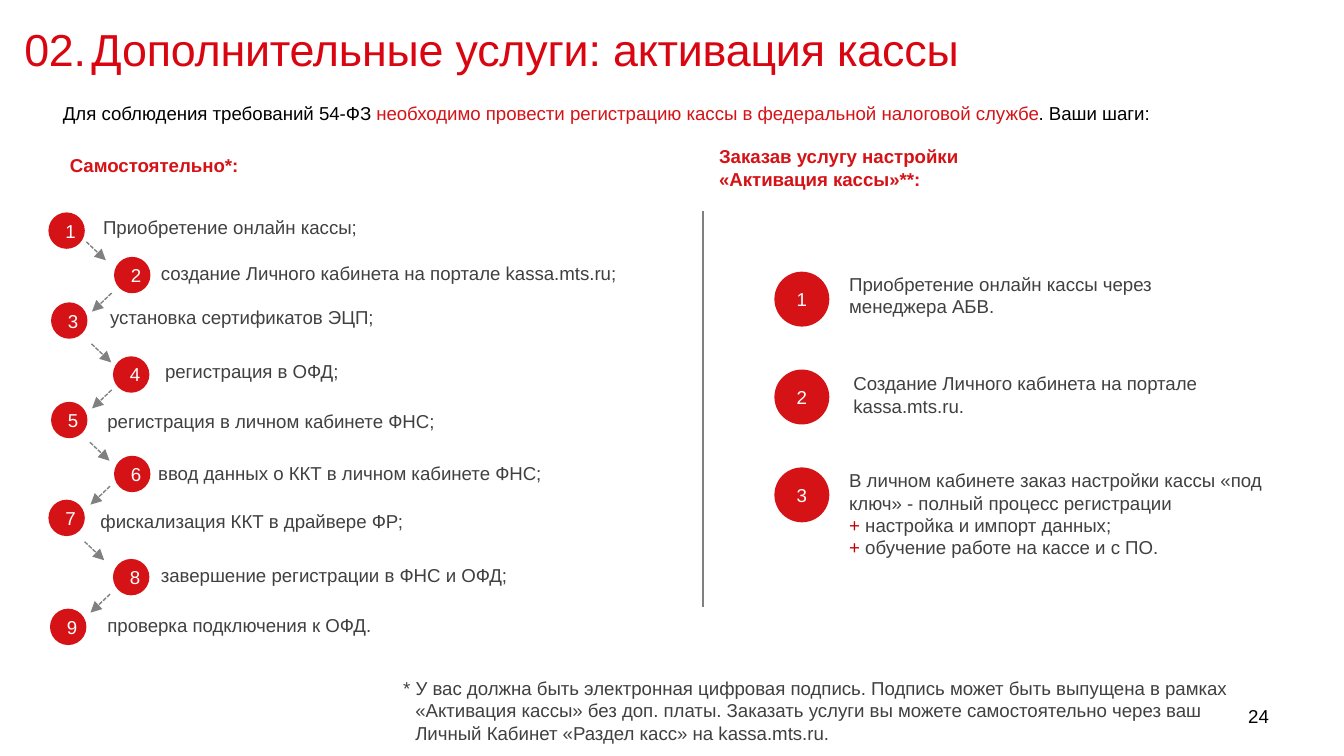
from dataclasses import dataclass

from lxml import etree
from pptx import Presentation
from pptx import util as u
from pptx.dml.color import RGBColor
from pptx.enum import dml, shapes, text
from pptx.oxml.ns import qn


@dataclass(frozen=True)
class Theme:
    font: str = "Arial"
    body: float = 10
    title: float = 24
    title_red: str = "D90611"
    red: str = "D51317"
    plus_red: str = "C00000"
    grey: str = "808080"
    ink: str = "404040"
    black: str = "000000"
    white: str = "FFFFFF"


THEME = Theme()
Span = tuple[str, str]  # wording and colour


@dataclass(frozen=True)
class Place:
    """Left, top, width and height in centimetres."""
    left: float
    top: float
    width: float
    height: float

    def lengths(self) -> list[u.Cm]:
        return [u.Cm(v) for v in (self.left, self.top, self.width, self.height)]


@dataclass(frozen=True)
class Step:
    wording: str
    circle: tuple[float, float]
    label: tuple[float, float]
    label_width: float
    arrow: tuple[float, float] | None = None  # start of the arrow to the next step


@dataclass(frozen=True)
class Service:
    paragraphs: list[list[Span]]
    label: Place


def colour(code: str) -> RGBColor:
    return RGBColor.from_string(code)


def set_font(para, code: str, size: float = THEME.body, bold: bool = False) -> None:
    para.font.name = THEME.font
    para.font.size = u.Pt(size)
    para.font.bold = bold
    para.font.color.rgb = colour(code)


def add_text(page, place: Place, paragraphs: list[list[Span]], bold: bool = False,
             wrap: bool = True):
    box = page.shapes.add_textbox(*place.lengths())
    frame = box.text_frame
    frame.word_wrap = wrap
    frame.auto_size = text.MSO_AUTO_SIZE.SHAPE_TO_FIT_TEXT
    for index, spans in enumerate(paragraphs):
        para = frame.paragraphs[0] if index == 0 else frame.add_paragraph()
        set_font(para, spans[0][1], bold=bold)
        for wording, code in spans:
            span = para.add_run()
            span.text = wording
            if code != spans[0][1]:
                span.font.color.rgb = colour(code)
    return box


def add_heading(page, place: Place, wording: str) -> None:
    box = add_text(page, place, [[(wording, THEME.title_red)]])
    frame = box.text_frame
    frame.auto_size = text.MSO_AUTO_SIZE.NONE
    frame.margin_left = frame.margin_top = frame.margin_right = 0
    frame.margin_bottom = u.Cm(0.56)
    para = frame.paragraphs[0]
    para.line_spacing = u.Pt(30)
    para.font.size = u.Pt(THEME.title)
    para.runs[0]._r.get_or_add_rPr().set("spc", "-10")


def add_circle(page, left: float, top: float, size: float, number: int) -> None:
    circle = page.shapes.add_shape(shapes.MSO_SHAPE.OVAL,
                                   *Place(left, top, size, size).lengths())
    circle.shadow.inherit = False
    circle.fill.solid()
    circle.fill.fore_color.rgb = colour(THEME.red)
    circle.line.color.rgb = colour(THEME.red)
    circle.line.width = u.Pt(1.35)
    circle.text_frame.vertical_anchor = text.MSO_ANCHOR.MIDDLE
    para = circle.text_frame.paragraphs[0]
    para.alignment = text.PP_ALIGN.CENTER
    set_font(para, THEME.white)
    para.add_run().text = str(number)


def add_line(page, start: tuple[float, float], end: tuple[float, float],
             width: float, arrow: bool = False) -> None:
    line = page.shapes.add_connector(shapes.MSO_CONNECTOR.STRAIGHT,
                                     *[u.Cm(v) for v in (*start, *end)])
    line.line.color.rgb = colour(THEME.grey)
    line.line.width = u.Pt(width)
    if arrow:
        line.line.dash_style = dml.MSO_LINE.SQUARE_DOT
        etree.SubElement(line.line._get_or_add_ln(), qn("a:tailEnd"), type="triangle")
    etree.SubElement(line._element.spPr, qn("a:effectLst"))


STEPS = [
    Step("Приобретение онлайн кассы;", (0.94, 4.04), (1.7, 3.96), 7.04, (1.63, 4.57)),
    Step("создание Личного кабинета на портале kassa.mts.ru;",
         (2.18, 4.88), (2.79, 4.83), 13.89, (2.11, 5.54)),
    Step("установка сертификатов ЭЦП;", (0.99, 5.74), (1.83, 5.66), 16.54, (1.73, 6.5)),
    Step("регистрация в ОФД;", (2.16, 6.76), (2.87, 6.68), 16.54, (2.11, 7.37)),
    Step("регистрация в личном кабинете ФНС;",
         (0.99, 7.62), (1.78, 7.62), 16.54, (1.7, 8.36)),
    Step("ввод данных о ККТ в личном кабинете ФНС;",
         (2.18, 8.64), (2.74, 8.61), 12.04, (2.08, 9.19)),
    Step("фискализация ККТ в драйвере ФР;",
         (0.94, 9.47), (1.65, 9.52), 7.49, (1.6, 10.24)),
    Step("завершение регистрации в ФНС и ОФД;",
         (2.16, 10.59), (2.79, 10.54), 8.05, (2.08, 11.23)),
    Step("проверка подключения к ОФД.", (0.97, 11.53), (1.78, 11.48), 6.22),
]

SERVICES = [
    Service([[("Приобретение онлайн кассы через менеджера АБВ.", THEME.ink)]],
            Place(15.8, 5.03, 7.04, 1.12)),
    Service([[("Создание Личного кабинета на портале kassa.mts.ru.", THEME.ink)]],
            Place(15.88, 6.91, 7.04, 1.12)),
    Service([[("В личном кабинете заказ настройки кассы «под ключ» - "
               "полный процесс регистрации", THEME.ink)],
             [("+ ", THEME.plus_red), ("настройка и импорт данных;", THEME.ink)],
             [("+ ", THEME.plus_red), ("обучение работе на кассе и с ПО.", THEME.ink)]],
            Place(15.8, 8.74, 9.22, 1.96)),
]


def main() -> None:
    deck = Presentation()
    deck.slide_width, deck.slide_height = u.Cm(25.4), u.Cm(14.29)
    page = deck.slides.add_slide(deck.slide_layouts[6])

    # Title and introduction
    add_heading(page, Place(0.46, 0.36, 1.68, 1.24), "02.")
    add_heading(page, Place(1.73, 0.36, 24.71, 1.88),
                "Дополнительные услуги: активация кассы")
    add_text(page, Place(0.94, 1.8, 23.57, 0.69), [[
        ("Для соблюдения требований 54-ФЗ ", THEME.black),
        ("необходимо провести регистрацию кассы в федеральной налоговой службе", THEME.red),
        (". Ваши шаги:", THEME.black)]])

    # Column headings and divider
    add_text(page, Place(1.07, 2.79, 3.76, 0.69),
             [[("Самостоятельно*:", THEME.red)]], bold=True, wrap=False)
    add_text(page, Place(13.34, 2.62, 12.45, 1.12),
             [[("Заказав услугу настройки", THEME.red)],
              [("«Активация кассы»**:", THEME.red)]], bold=True)
    add_line(page, (13.28, 3.99), (13.28, 11.48), 1)

    # Zigzag of steps: arrows run right from odd numbers, left from even ones
    for number, step in enumerate(STEPS, 1):
        add_circle(page, *step.circle, 0.64, number)
        add_text(page, Place(*step.label, step.label_width, 0.69),
                 [[(step.wording, THEME.ink)]])
        if step.arrow:
            x, y = step.arrow
            reach = 0.37 if number % 2 else -0.37
            add_line(page, step.arrow, (x + reach, y + 0.35), 0.75, arrow=True)

    # Ordered service
    for index, service in enumerate(SERVICES):
        add_circle(page, 14.66, 5.16 + 1.85 * index, 0.99, index + 1)
        add_text(page, service.label, service.paragraphs)

    # Footnote with a hanging indent
    note = add_text(page, Place(7.37, 12.67, 16.33, 1.55), [[(
        "* У вас должна быть электронная цифровая подпись. Подпись может быть выпущена "
        "в рамках «Активация кассы» без доп. платы. Заказать услуги вы можете "
        "самостоятельно через ваш Личный Кабинет «Раздел касс» на kassa.mts.ru.",
        THEME.ink)]])
    indent = u.Cm(0.23)
    layout = note.text_frame.paragraphs[0]._p.get_or_add_pPr()
    layout.set("marL", str(indent))
    layout.set("indent", str(-indent))

    # Page number
    box = add_text(page, Place(23.44, 13.34, 0.69, 0.38), [[("24", THEME.black)]])
    frame = box.text_frame
    frame.auto_size = text.MSO_AUTO_SIZE.NONE
    frame.margin_left = frame.margin_top = frame.margin_right = frame.margin_bottom = 0
    frame.vertical_anchor = text.MSO_ANCHOR.MIDDLE
    frame.paragraphs[0].alignment = text.PP_ALIGN.CENTER

    deck.save("out.pptx")


if __name__ == "__main__":
    main()
